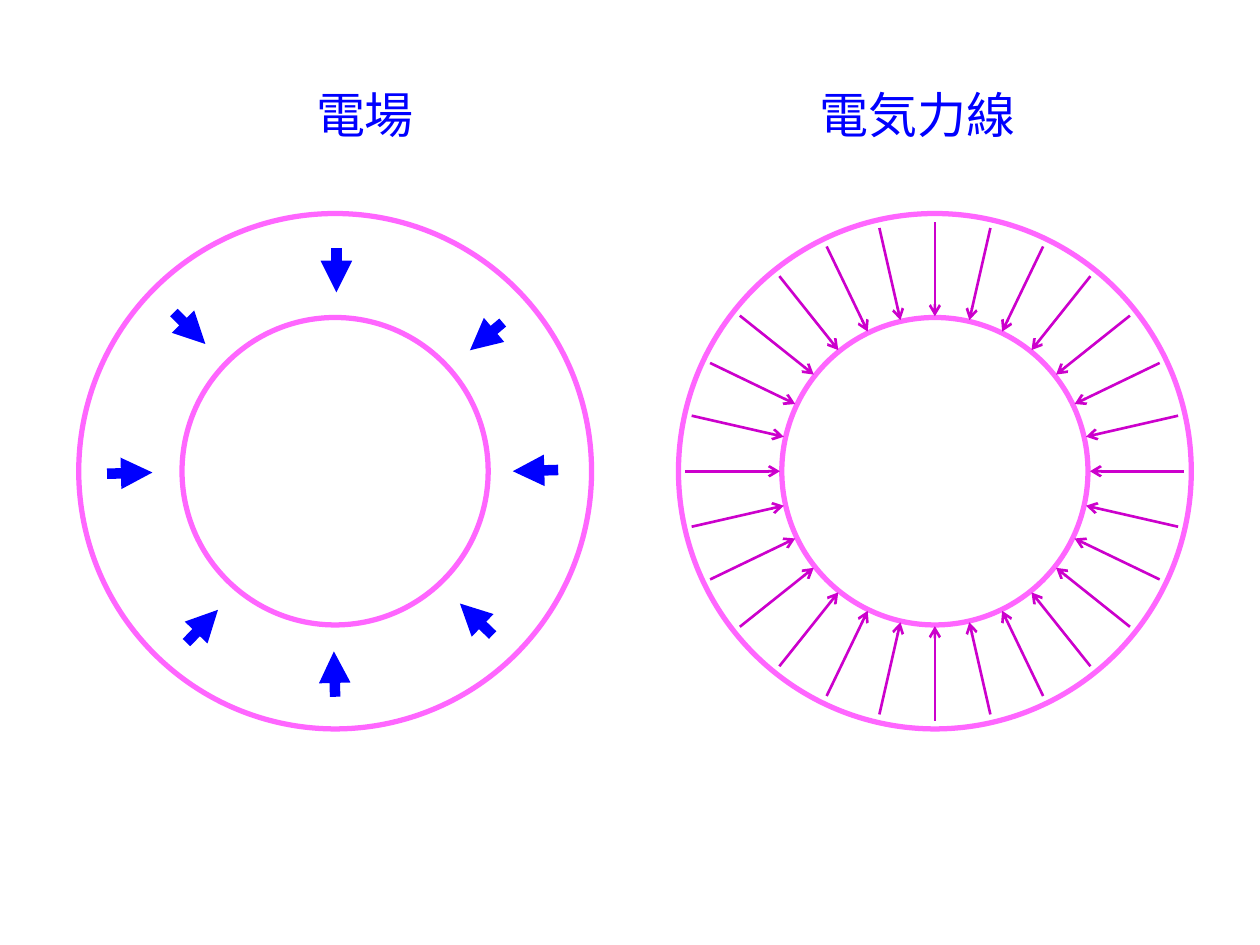
from math import cos, radians, sin

from lxml.etree import SubElement
from pptx import Presentation
from pptx.dml.color import RGBColor
from pptx.enum.shapes import MSO_CONNECTOR, MSO_SHAPE
from pptx.oxml.ns import qn
from pptx.util import Inches, Pt

COLORS = {"ring": "FF66FF", "field_line": "CC00CC", "field": "0000FF"}
FONT = "Times New Roman"

TITLES = [("電場", 2.41, 0.99), ("電気力線", 6.41, 1.77)]
RING_CENTERS = [(2.66, 3.74), (7.42, 3.74)]
INNER_RING = (2.43, 2.44)
OUTER_RING = (4.07, 4.09)

FIELD_LINE_COUNT = 28
FIELD_LINE_CENTER = (7.42, 3.74)
FIELD_LINE_RADII = (1.23, 1.98)

FIELD_ARROWS = [
    ((4.07, 3.74), (4.43, 3.73)),
    ((3.65, 4.79), (3.91, 5.04)),
    ((2.65, 5.17), (2.66, 5.53)),
    ((1.73, 4.84), (1.48, 5.10)),
    ((1.21, 3.75), (0.85, 3.76)),
    ((1.63, 2.73), (1.38, 2.48)),
    ((2.67, 2.32), (2.67, 1.97)),
    ((3.73, 2.78), (3.99, 2.56)),
]


def rgb(name):
    return RGBColor.from_string(COLORS[name])


def add_ring(slide, center, size):
    (x, y), (width, height) = center, size
    ring = slide.shapes.add_shape(
        MSO_SHAPE.OVAL, Inches(x - width / 2), Inches(y - height / 2),
        Inches(width), Inches(height))
    ring.shadow.inherit = False
    ring.fill.background()
    ring.line.color.rgb = rgb("ring")
    ring.line.width = Pt(3)


def add_arrow(slide, tip, end, color, width, head):
    arrow = slide.shapes.add_connector(
        MSO_CONNECTOR.STRAIGHT, *(Inches(v) for v in (*tip, *end)))
    arrow.line.color.rgb = rgb(color)
    arrow.line.width = Pt(width)
    SubElement(arrow.line._get_or_add_ln(), qn("a:headEnd"), type=head)
    SubElement(arrow._element.spPr, qn("a:effectLst"))


def add_text(slide, text, left, top, width, height, size, color):
    box = slide.shapes.add_textbox(*(Inches(v) for v in (left, top, width, height)))
    box.text_frame.word_wrap = False
    run = box.text_frame.paragraphs[0].add_run()
    run.text = text
    run.font.size = Pt(size)
    run.font.name = FONT
    run.font.color.rgb = rgb(color)


def polar(center, radius, angle):
    return center[0] + radius * cos(angle), center[1] + radius * sin(angle)


def main():
    prs = Presentation()
    prs.slide_width, prs.slide_height = Inches(10), Inches(7.5)
    slide = prs.slides.add_slide(prs.slide_layouts[6])

    for center in RING_CENTERS:
        add_ring(slide, center, INNER_RING)

    for i in range(FIELD_LINE_COUNT):
        angle = radians(360 * i / FIELD_LINE_COUNT)
        tip, end = (polar(FIELD_LINE_CENTER, r, angle) for r in FIELD_LINE_RADII)
        add_arrow(slide, tip, end, color="field_line", width=1.5, head="arrow")

    for tip, end in FIELD_ARROWS:
        add_arrow(slide, tip, end, color="field", width=6, head="triangle")

    for title, left, width in TITLES:
        add_text(slide, title, left=left, top=0.62, width=width, height=0.57,
                 size=28, color="field")

    for center in reversed(RING_CENTERS):
        add_ring(slide, center, OUTER_RING)

    prs.save("out.pptx")


if __name__ == "__main__":
    main()
